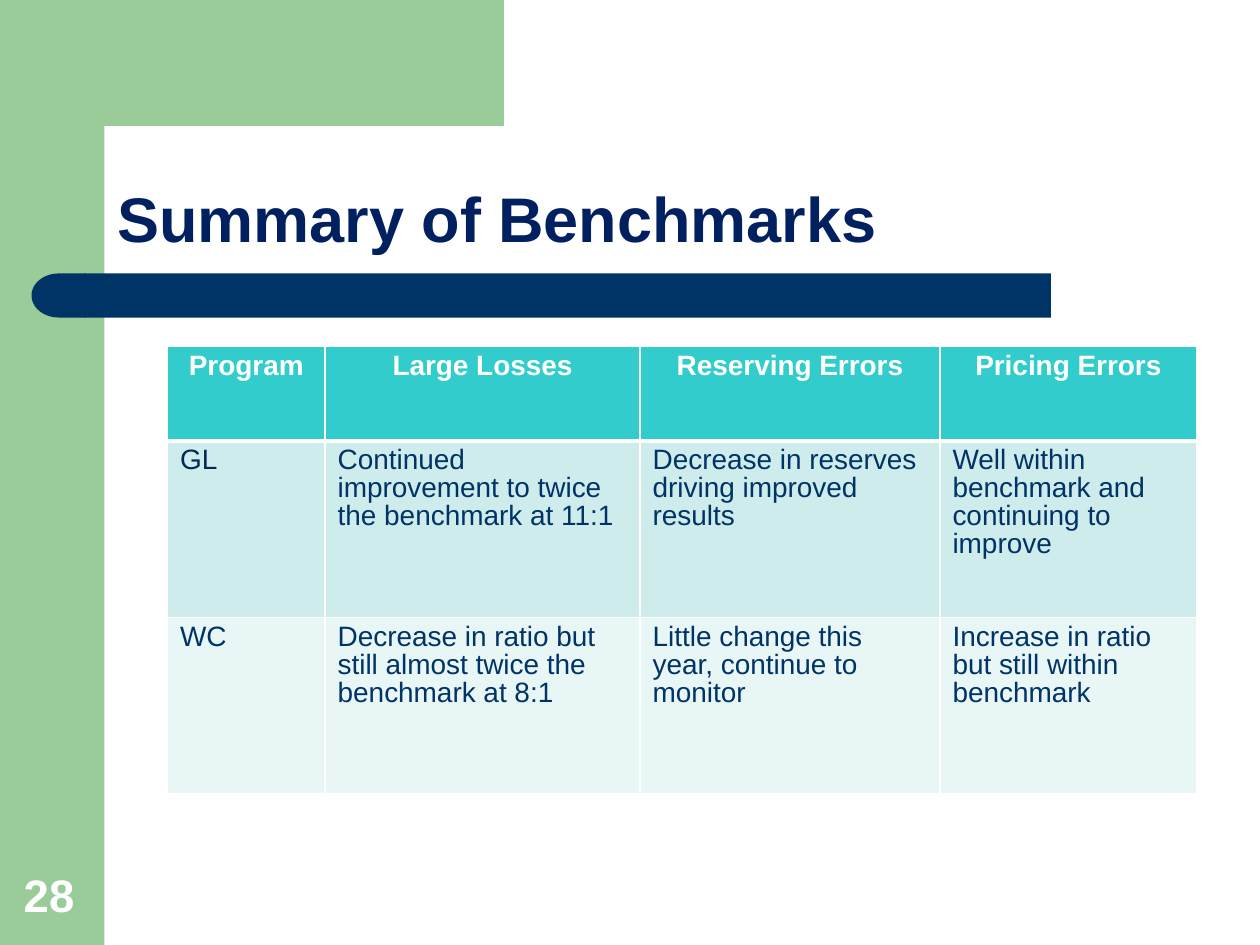
import math

import pptx
import pptx.dml.color
import pptx.enum.shapes
import pptx.enum.text
import pptx.oxml
import pptx.oxml.ns
import pptx.util

Inches = pptx.util.Inches
Pt = pptx.util.Pt
Shape = pptx.enum.shapes.MSO_SHAPE
Align = pptx.enum.text.PP_ALIGN
Anchor = pptx.enum.text.MSO_ANCHOR

GREEN = "99CC99"
NAVY = "003366"
WHITE = "FFFFFF"
ROW_FILLS = ["33CCCC", "CEECEC", "E8F6F6"]
COLUMN_WIDTHS = [1.25, 2.5, 2.38, 2.04]
ROW_HEIGHTS = [0.75, 1.4, 1.4]
BENCHMARKS = [
    ["Program", "Large Losses", "Reserving Errors", "Pricing Errors"],
    ["GL", "Continued improvement to twice the benchmark at 11:1",
     "Decrease in reserves driving improved results",
     "Well within benchmark and continuing to improve"],
    ["WC", "Decrease in ratio but still almost twice the benchmark at 8:1",
     "Little change this year, continue to monitor",
     "Increase in ratio but still within benchmark"],
]


def color(value):
    return pptx.dml.color.RGBColor.from_string(value)


def write(frame, text, size=16, fill=NAVY, bold=False, align=Align.LEFT,
          line_spacing=None, space_before=0):
    paragraph = frame.paragraphs[0]
    paragraph.alignment = align
    paragraph.space_before = Pt(space_before)
    if line_spacing:
        paragraph.line_spacing = line_spacing
    run = paragraph.add_run()
    run.text = text
    run.font.name = "Arial"
    run.font.size = Pt(size)
    run.font.bold = bold
    run.font.color.rgb = color(fill)


def add_border(cell, side, width):
    properties = cell._tc.get_or_add_tcPr()
    properties.append(pptx.oxml.parse_xml(
        f'<a:ln{side} {pptx.oxml.ns.nsdecls("a")} w="{Pt(width)}">'
        f'<a:solidFill><a:srgbClr val="{WHITE}"/></a:solidFill></a:ln{side}>'))


class SlideBuilder:
    def __init__(self, presentation):
        self.slide = presentation.slides.add_slide(presentation.slide_layouts[5])

    def paint(self, shape, fill):
        shape.shadow.inherit = False
        shape.fill.solid()
        shape.fill.fore_color.rgb = color(fill)
        shape.line.fill.background()
        return shape

    def block(self, kind, left, top, width, height, fill):
        shape = self.slide.shapes.add_shape(
            kind, Inches(left), Inches(top), Inches(width), Inches(height))
        return self.paint(shape, fill)

    def outline(self, points, fill):
        builder = self.slide.shapes.build_freeform(
            *points[0], scale=Inches(1))
        builder.add_line_segments(points[1:], close=True)
        return self.paint(builder.convert_to_shape(), fill)

    def title(self, text, left, top, width, height):
        shape = self.slide.shapes.title
        shape.left, shape.top = Inches(left), Inches(top)
        shape.width, shape.height = Inches(width), Inches(height)
        frame = shape.text_frame
        frame.auto_size = pptx.enum.text.MSO_AUTO_SIZE.NONE
        frame.vertical_anchor = Anchor.BOTTOM
        write(frame, text, size=36, fill="002060", bold=True, line_spacing=0.9)

    def label(self, text, left, top, width, height, **style):
        box = self.slide.shapes.add_textbox(
            Inches(left), Inches(top), Inches(width), Inches(height))
        box.text_frame.word_wrap = True
        box.text_frame.vertical_anchor = Anchor.BOTTOM
        write(box.text_frame, text, **style)

    def table(self, rows, left, top, widths, heights):
        table = self.slide.shapes.add_table(
            len(rows), len(widths), Inches(left), Inches(top),
            Inches(sum(widths)), Inches(sum(heights))).table
        for column, width in zip(table.columns, widths):
            column.width = Inches(width)
        for row, height in zip(table.rows, heights):
            row.height = Inches(height)
        for row_index, texts in enumerate(rows):
            header = row_index == 0
            for column_index, text in enumerate(texts):
                cell = table.cell(row_index, column_index)
                add_border(cell, "L", 1)
                add_border(cell, "R", 1)
                add_border(cell, "T", 3 if row_index == 1 else 1)
                add_border(cell, "B", 3 if header else 1)
                cell.fill.solid()
                cell.fill.fore_color.rgb = color(ROW_FILLS[row_index])
                text_color = "002A56" if text == "GL" else NAVY
                write(cell.text_frame, text, bold=header,
                      fill=WHITE if header else text_color,
                      align=Align.CENTER if header else Align.LEFT,
                      line_spacing=0.9, space_before=3.2)


def corner_points():
    arc = []
    for step in range(17):
        angle = math.pi / 2 * step / 16
        arc.append((1.16 - 0.33 * math.sin(angle), 1.16 - 0.33 * math.cos(angle)))
    return [(3.5, 0), (3.5, 0.83), *arc, (0.83, 1.28), (0.5, 1.28), (0.5, 0)]


def main():
    presentation = pptx.Presentation()
    presentation.slide_width = Inches(10)
    presentation.slide_height = Inches(7.5)
    builder = SlideBuilder(presentation)
    builder.block(Shape.RECTANGLE, 0, 0, 0.83, 7.5, GREEN)
    builder.outline(corner_points(), GREEN)
    bar = builder.block(Shape.ROUNDED_RECTANGLE, 0.67, 2.17, 7.67, 0.35, NAVY)
    bar.adjustments[0] = 0
    bar_end = builder.block(Shape.FLOWCHART_DELAY, 0.25, 2.17, 0.43, 0.35, NAVY)
    bar_end.rotation = 180
    builder.title("Summary of Benchmarks", 0.83, 0.83, 8.67, 1.25)
    builder.table(BENCHMARKS, 1.33, 2.75, COLUMN_WIDTHS, ROW_HEIGHTS)
    builder.label("28", 0.09, 6.83, 0.64, 0.53, size=26, fill=WHITE, bold=True)
    presentation.save("out.pptx")


if __name__ == "__main__":
    main()
